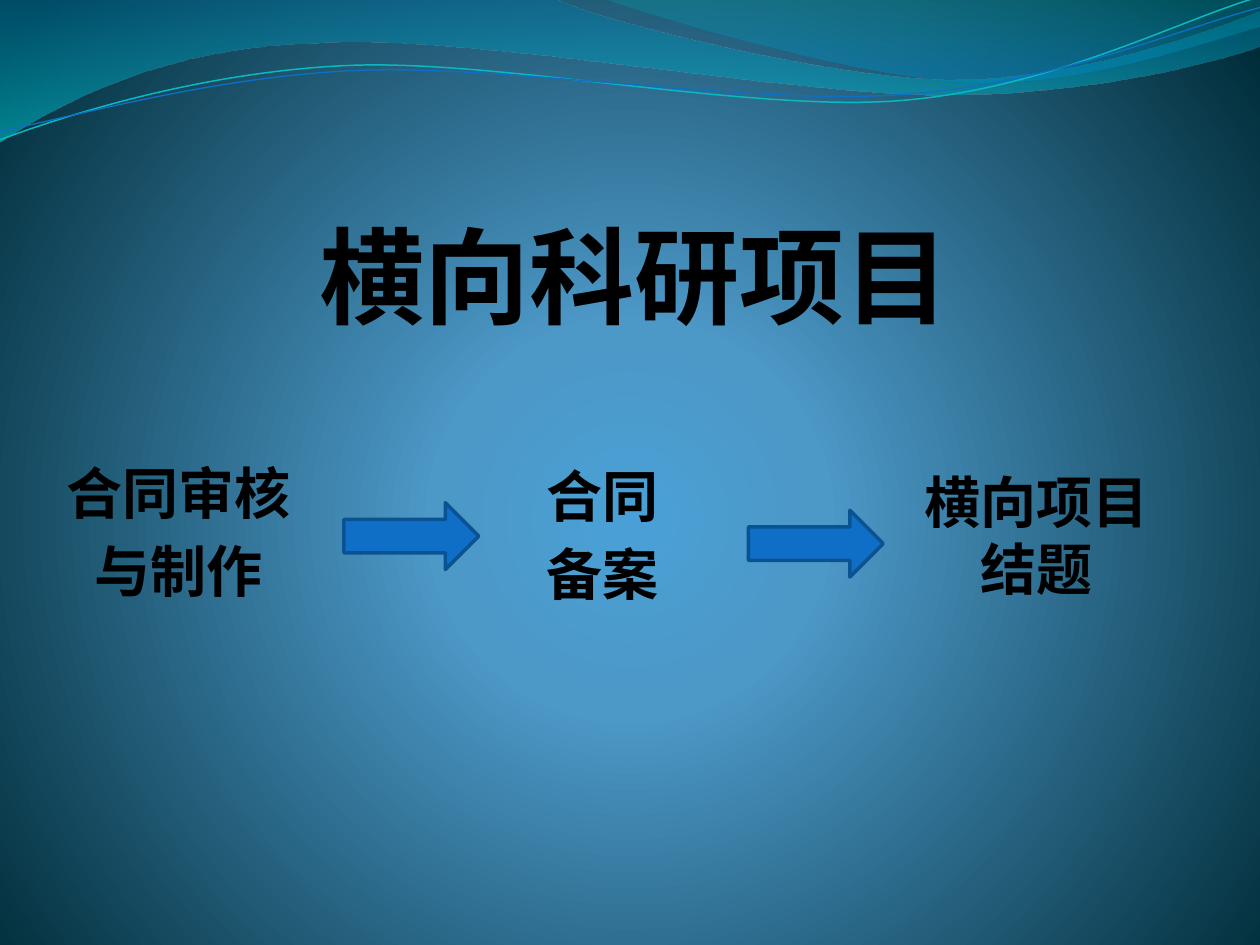
from lxml.etree import SubElement
from pptx import Presentation
from pptx.dml.color import RGBColor
from pptx.enum.lang import MSO_LANGUAGE_ID
from pptx.enum.shapes import MSO_SHAPE
from pptx.enum.text import MSO_ANCHOR, MSO_AUTO_SIZE, PP_ALIGN
from pptx.oxml.ns import qn
from pptx.util import Inches, Pt

COLUMNS, ROWS = 100, 75
FONT = "Noto Sans CJK SC"


def rgb(hex_color):
    return RGBColor.from_string(hex_color)


def set_gradient(fill, owner, stops, centre=None):
    """Stops are (percent, colour, opacity); centre gives a circular gradient."""
    fill.gradient()
    gradient = next(owner.iter(qn("a:gradFill")))
    for child in list(gradient):
        gradient.remove(child)
    stop_list = SubElement(gradient, qn("a:gsLst"))
    for percent, color, opacity in stops:
        stop = SubElement(stop_list, qn("a:gs"), pos=str(percent * 1000))
        tint = SubElement(stop, qn("a:srgbClr"), val=color)
        if opacity < 100:
            SubElement(tint, qn("a:alpha"), val=str(opacity * 1000))
    if centre:
        circle = SubElement(gradient, qn("a:path"), path="circle")
        edges = {side: str(share * 1000) for side, share in zip("ltrb", centre)}
        SubElement(circle, qn("a:fillToRect"), **edges)
    else:
        SubElement(gradient, qn("a:lin"), ang="5400000", scaled="1")


def write(frame, lines, size=32, color="000000", bold=True,
          align=PP_ALIGN.CENTER, before=0, margins=(0.1, 0.05, 0.07, 0.05)):
    """Margins are left, top, right and bottom in inches."""
    frame.word_wrap = True
    (frame.margin_left, frame.margin_top,
     frame.margin_right, frame.margin_bottom) = map(Inches, margins)
    for index, line in enumerate(lines):
        paragraph = frame.paragraphs[0] if index == 0 else frame.add_paragraph()
        paragraph.alignment = align
        paragraph.space_before = Pt(size * before)
        run = paragraph.add_run()
        run.text = line
        font = run.font
        font.size, font.bold, font.name = Pt(size), bold, FONT
        font.color.rgb = rgb(color)
        font.language_id = MSO_LANGUAGE_ID.SIMPLIFIED_CHINESE
        SubElement(run._r.get_or_add_rPr(), qn("a:ea"), typeface=FONT)


class SlideBuilder:
    """Places elements on a grid of COLUMNS by ROWS."""

    def __init__(self, deck):
        self.slide = deck.slides.add_slide(deck.slide_layouts[5])
        self.shapes = self.slide.shapes
        self.column = deck.slide_width / COLUMNS
        self.row = deck.slide_height / ROWS

    def place(self, left, top, width=0, height=0):
        return (round(left * self.column), round(top * self.row),
                round(width * self.column), round(height * self.row))

    def background(self, stops, centre):
        set_gradient(self.slide.background.fill, self.slide.element, stops, centre)

    def outline(self, start, segments, close):
        """Segments are lines (2 numbers) or cubic curves (6 numbers)."""
        builder = self.shapes.build_freeform(*self.place(*start)[:2])
        builder.add_line_segments([self.place(*segment[-2:])[:2]
                                   for segment in segments], close=close)
        shape = builder.convert_to_shape()
        shape.shadow.inherit = False
        sides = list(shape._element.iter(qn("a:lnTo")))
        for side, segment in zip(sides, segments):
            if len(segment) == 6:
                self.bend(shape, side, segment)
        return shape

    def bend(self, shape, side, segment):
        """Turn a straight side into a cubic curve."""
        curve = side.makeelement(qn("a:cubicBezTo"))
        for x, y in zip(segment[::2], segment[1::2]):
            left, top = self.place(x, y)[:2]
            SubElement(curve, qn("a:pt"), x=str(left - shape.left), y=str(top - shape.top))
        side.getparent().replace(side, curve)

    def wave(self, start, segments, stops):
        shape = self.outline(start, segments, close=True)
        set_gradient(shape.fill, shape._element.spPr, stops)
        shape.line.fill.background()

    def ribbon(self, start, segments, color, weight):
        shape = self.outline(start, segments, close=False)
        shape.fill.background()
        shape.line.color.rgb = rgb(color)
        shape.line.width = Pt(weight)

    def title(self, text, box):
        title = self.shapes.title
        title.left, title.top, title.width, title.height = self.place(*box)
        frame = title.text_frame
        frame.auto_size = MSO_AUTO_SIZE.NONE
        frame.vertical_anchor = MSO_ANCHOR.BOTTOM
        write(frame, [text], size=60, margins=(0, 0, 0.02, 0))

    def step(self, lines, box, **style):
        frame = self.shapes.add_textbox(*self.place(*box)).text_frame
        write(frame, lines, before=0.2, **style)

    def arrow(self, left, top):
        shape = self.shapes.add_shape(MSO_SHAPE.RIGHT_ARROW,
                                      *self.place(left, top, 10.7, 5.3))
        shape.shadow.inherit = False
        shape.fill.solid()
        shape.fill.fore_color.rgb = rgb("0F6FC6")
        shape.line.color.rgb = rgb("0B5292")
        shape.line.width = Pt(2)


def main():
    deck = Presentation()
    deck.slide_width, deck.slide_height = Inches(10), Inches(7.5)
    page = SlideBuilder(deck)

    page.background([(0, "4AA0D6", 100), (25, "4C98C7", 100), (100, "002C38", 100)],
                    centre=(10, 110, 10, 100))
    page.wave((0, 0), [(44, -0.1), (47.6, 1.7, 66.4, 6.3, 75.8, 6.3),
                       (85.3, 6.3, 95.8, 2.6, 100, 0.9), (100.1, 3.6),
                       (98.3, 4.4, 87, 7.6, 74.6, 7.5),
                       (62.2, 7.5, 38.2, 2.8, 25.7, 3.4),
                       (12.9, 3.6, 4.6, 8.3, -0.1, 11.3)],
              [(0, "0074A1", 45), (100, "00C6CF", 55)])
    page.wave((47.9, -0.1), [(50.9, 1.1, 68.2, 6.2, 76.9, 6.5),
                             (85.6, 6.9, 96.1, 3.2, 100, 2.1), (100, 0)],
              [(0, "00A1A9", 30), (80, "008BBF", 45)])
    page.ribbon((0, 11.1), [(4.8, 9.3, 15.8, 5.7, 27.7, 5.2),
                            (39.5, 4.7, 59.3, 8.9, 71.3, 8),
                            (83.3, 7.1, 93.8, 1.5, 99.8, -0.2)], "0AB8BF", 0.85)
    page.ribbon((0, 10.4), [(4.7, 9.6, 16.4, 6.1, 28.3, 5.6),
                            (40.3, 5.1, 59.7, 8.4, 71.7, 7.5),
                            (83.6, 6.7, 94.1, 2.1, 100, 0.6)], "0F6FC6", 0.75)

    page.title("横向科研项目", (7.5, 6.8, 85.9, 20))
    page.step(["合同审核", "与制作"], (3.5, 35.9, 22, 9.3),
              margins=(0, 0.05, 0.07, 0.05))
    page.arrow(27.3, 39.9)
    page.step(["合同", "备案"], (39, 36.1, 18.1, 12.9), margins=(0.1, 0.05, 0.15, 0.05))
    page.arrow(59.4, 40.5)
    page.step(["横向项目结题"], (70.5, 36.6, 24.4, 11.8), margins=(0.1, 0.05, 0.18, 0.05))

    deck.save("out.pptx")


if __name__ == "__main__":
    main()
